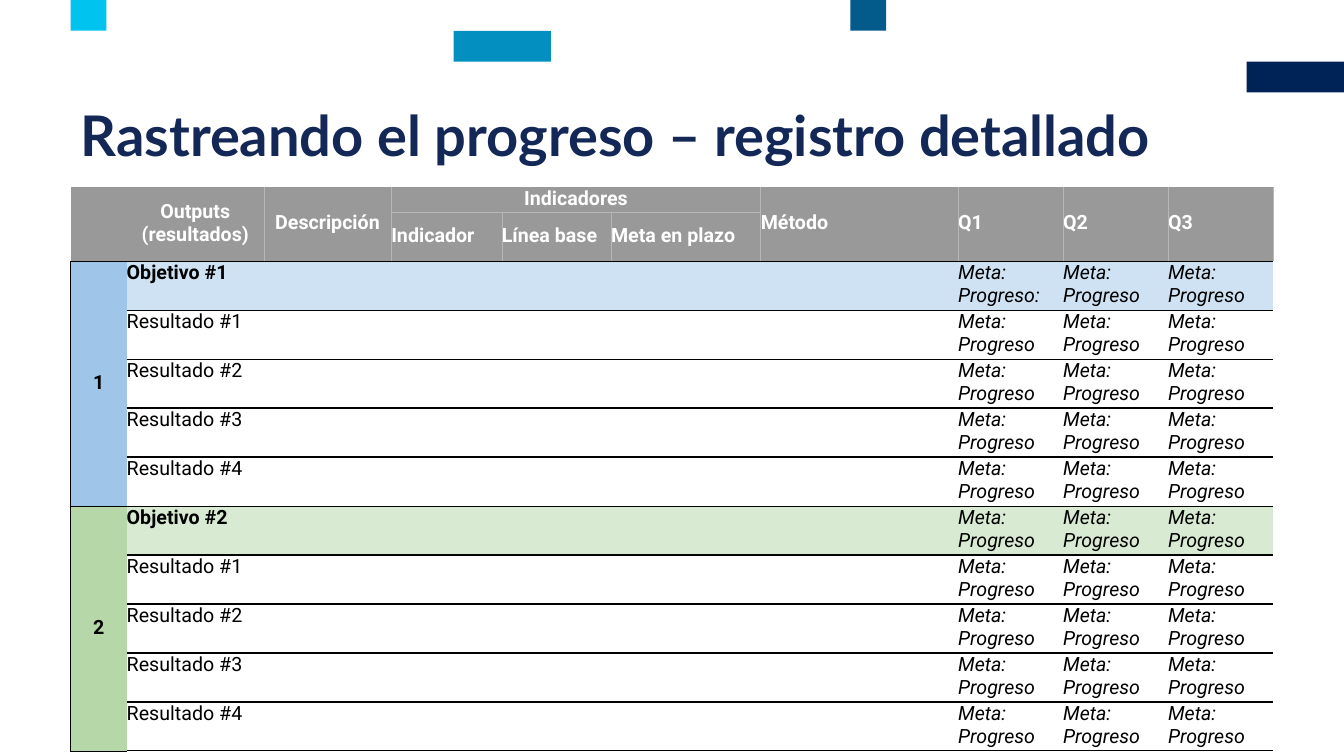
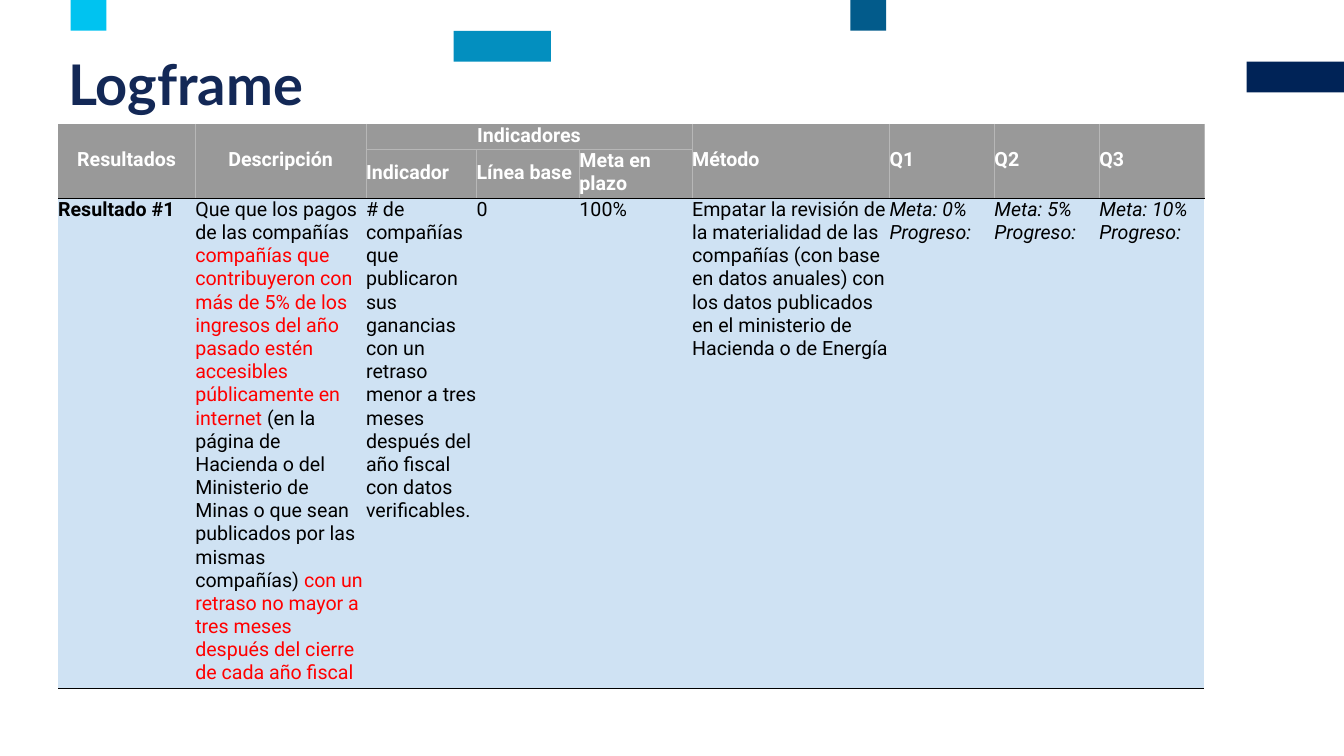
from lxml import etree
from pptx import Presentation
from pptx.dml.color import RGBColor
from pptx.enum.shapes import MSO_SHAPE
from pptx.enum.text import MSO_ANCHOR, MSO_AUTO_SIZE, PP_ALIGN
from pptx.oxml.ns import qn
from pptx.util import Pt

RECTANGLE = MSO_SHAPE.RECTANGLE
TOP, MIDDLE = MSO_ANCHOR.TOP, MSO_ANCHOR.MIDDLE
LEFT, CENTER = PP_ALIGN.LEFT, PP_ALIGN.CENTER
NO_FIT = MSO_AUTO_SIZE.NONE
NO_GRID_STYLE = "{2D5ABB26-0587-4C30-8999-92F81FD0307C}"


class Theme:
    title_font, title_size, title_color = "Lato", 40, "132856"
    text_font, text_size = "Roboto", 14
    text, inverse, accent = "000000", "FFFFFF", "FF0000"
    header = "999999"
    blue, blue_tint = "9FC5E8", "CFE2F3"
    green, green_tint = "B6D7A8", "D9EAD3"
    divider, thin, thick = ("B7B7B7", 0.5), ("000000", 0.5), ("000100", 1)
    bands = [
        (890.5, 44, 69.5, "002357"),
        (607.5, 0, 25.5, "025B8B"),
        (324, 22, 69.5, "038FBF"),
        (50.5, 0, 25.5, "00C3F0"),
    ]
    band_height = 22


def style_cell(cell, text, color=Theme.text, fill=None, bold=False, italic=False,
               align=LEFT, anchor=TOP, lines=None):
    cell.margin_left = cell.margin_top = cell.margin_right = Pt(0)
    cell.margin_bottom = Pt(1.5)
    cell.vertical_anchor = anchor
    p = cell.text_frame.paragraphs[0]
    p.alignment = align
    if isinstance(text, str):
        p.text = text
    else:
        for words, run_color in text:
            r = p.add_run()
            r.text = words
            r.font.color.rgb = RGBColor.from_string(run_color)
    font = p.font
    font.name, font.size = Theme.text_font, Pt(Theme.text_size)
    font.bold, font.italic = bold, italic
    font.color.rgb = RGBColor.from_string(color)
    tc_pr = cell._tc.get_or_add_tcPr()
    for side in "LRTB":
        if lines and side in lines:
            line_color, width = lines[side]
            ln = etree.SubElement(tc_pr, qn("a:ln" + side), w=str(Pt(width)))
            solid = etree.SubElement(ln, qn("a:solidFill"))
            etree.SubElement(solid, qn("a:srgbClr"), val=line_color)
    if fill:
        cell.fill.solid()
        cell.fill.fore_color.rgb = RGBColor.from_string(fill)
    else:
        cell.fill.background()


prs = Presentation()
prs.slide_width, prs.slide_height = Pt(960), Pt(540)
layout = prs.slide_layouts[5]
for ph in list(layout.placeholders)[1:]:
    layout.shapes.element.remove(ph.element)

indicators = ["Indicador", "Línea base", "Meta en plazo"]
closing = ["Método", "Q1", "Q2", "Q3"]
sections = [("1", Theme.blue, Theme.blue_tint), ("2", Theme.green, Theme.green_tint)]
section_rows = 5

tracking_rows = []
for number, section_fill, tint in sections:
    for i in range(section_rows):
        label = f"Resultado #{i}" if i else f"Objetivo #{number}"
        quarters = ["Meta: \vProgreso"] * 3
        if not tracking_rows:
            quarters[0] += ":"
        tracking_rows.append((None if i else tint, [label] + [""] * 5 + quarters))

description = [
    ("Que que los pagos de las compañías ", Theme.text),
    ("compañías que contribuyeron con más de 5% de los ingresos del año pasado "
     "estén accesibles públicamente en internet ", Theme.accent),
    ("(en la página de Hacienda o del Ministerio de Minas o que sean publicados "
     "por las mismas compañías) ", Theme.text),
    ("con un retraso no mayor a tres meses después del cierre de cada año fiscal",
     Theme.accent),
]
logframe_rows = [(Theme.blue_tint, [
    "Resultado #1",
    description,
    "# de compañías que publicaron sus ganancias con un retraso menor a tres meses "
    "después del año fiscal con datos verificables.",
    "0",
    "100%",
    "Empatar la revisión de la materialidad de las compañías (con base en datos "
    "anuales) con los datos publicados en el ministerio de Hacienda o de Energía",
    "Meta: 0% \vProgreso:",
    "Meta: 5%\vProgreso:",
    "Meta: 10%\vProgreso:",
])]

pages = [
    ("Rastreando el progreso – registro detallado", 50.5, 72.5, 133.5,
     ["", "Outputs (resultados)", "Descripción"],
     [40, 98, 91, 79, 78, 107, 141, 75, 75, 75], 35, tracking_rows, sections),
    ("Logframe", 41.5, 36, 88.5,
     ["Resultados", "Descripción"],
     [98, 122, 79, 73.5, 80.5, 141, 75, 75, 75], 350, logframe_rows, []),
]

for title, left, top, table_top, lead, widths, body_height, body, groups in pages:
    s = prs.slides.add_slide(layout)
    sp = s.shapes.title
    sp.left, sp.top, sp.width, sp.height = Pt(left), Pt(top), Pt(859), Pt(52.5)
    tf = sp.text_frame
    tf.word_wrap, tf.auto_size, tf.vertical_anchor = True, NO_FIT, MIDDLE
    p = tf.paragraphs[0]
    p.text = title
    p.alignment, p.line_spacing = LEFT, 0.89
    p.font.name, p.font.size, p.font.bold = Theme.title_font, Pt(Theme.title_size), True
    p.font.color.rgb = RGBColor.from_string(Theme.title_color)

    heights = [18, 35] + [body_height] * len(body)
    table = s.shapes.add_table(len(heights), len(widths), Pt(left), Pt(table_top),
                               Pt(sum(widths)), Pt(sum(heights))).table
    table.first_row = table.horz_banding = False
    table._tbl.tblPr.find(qn("a:tableStyleId")).text = NO_GRID_STYLE
    for column, width in zip(table.columns, widths):
        column.width = Pt(width)
    for row, height in zip(table.rows, heights):
        row.height = Pt(height)

    first = len(lead)
    last = first + len(indicators) - 1
    for c, label in enumerate(lead + indicators + closing):
        grouped = first <= c <= last
        upper = label
        if grouped:
            upper = "Indicadores" if c == first else ""
        for r, text in enumerate([upper, label if grouped else ""]):
            lines = {"B": Theme.divider if grouped and r == 0 else Theme.thin}
            if r == 1 or not first < c <= last:
                if c >= first - 1:
                    lines["L"] = Theme.divider
                if c >= first - 2:
                    lines["R"] = Theme.divider
            if grouped and r == 1:
                lines["T"] = Theme.divider
            centered = c < first or (grouped and r == 0)
            style_cell(table.cell(r, c), text, Theme.inverse, Theme.header, True,
                       align=CENTER if centered else LEFT, anchor=MIDDLE, lines=lines)
        if not grouped:
            table.cell(0, c).merge(table.cell(1, c))
    table.cell(0, first).merge(table.cell(0, last))

    for i, (fill, texts) in enumerate(body):
        next_filled = i + 1 < len(body) and body[i + 1][0]
        lines = {"T": Theme.thin if fill else Theme.thick,
                 "B": Theme.thin if next_filled else Theme.thick}
        offset = len(widths) - len(texts)
        for c, text in enumerate(texts, offset):
            style_cell(table.cell(i + 2, c), text, fill=fill,
                       bold=bool(fill) and c == offset,
                       italic=c >= len(widths) - 3, lines=lines)

    for g, (number, section_fill, tint) in enumerate(groups):
        start = 2 + g * section_rows
        end = start + section_rows - 1
        for r in range(start, end + 1):
            lines = {"L": Theme.thin}
            if r == start:
                lines["T"] = Theme.thin
            if r in (start, end):
                lines["B"] = Theme.thin
            style_cell(table.cell(r, 0), number if r == start else "", fill=section_fill,
                       bold=True, align=CENTER, anchor=MIDDLE, lines=lines)
        table.cell(start, 0).merge(table.cell(end, 0))

bands = []
for left, top, width, color in Theme.bands:
    sp = s.shapes.add_shape(RECTANGLE, Pt(left), Pt(top), Pt(width), Pt(Theme.band_height))
    sp.shadow.inherit = False
    sp.fill.solid()
    sp.fill.fore_color.rgb = RGBColor.from_string(color)
    sp.line.fill.background()
    bands.append(sp)
for sp in bands:
    layout.shapes.element.append(sp.element)

prs.save("out.pptx")
